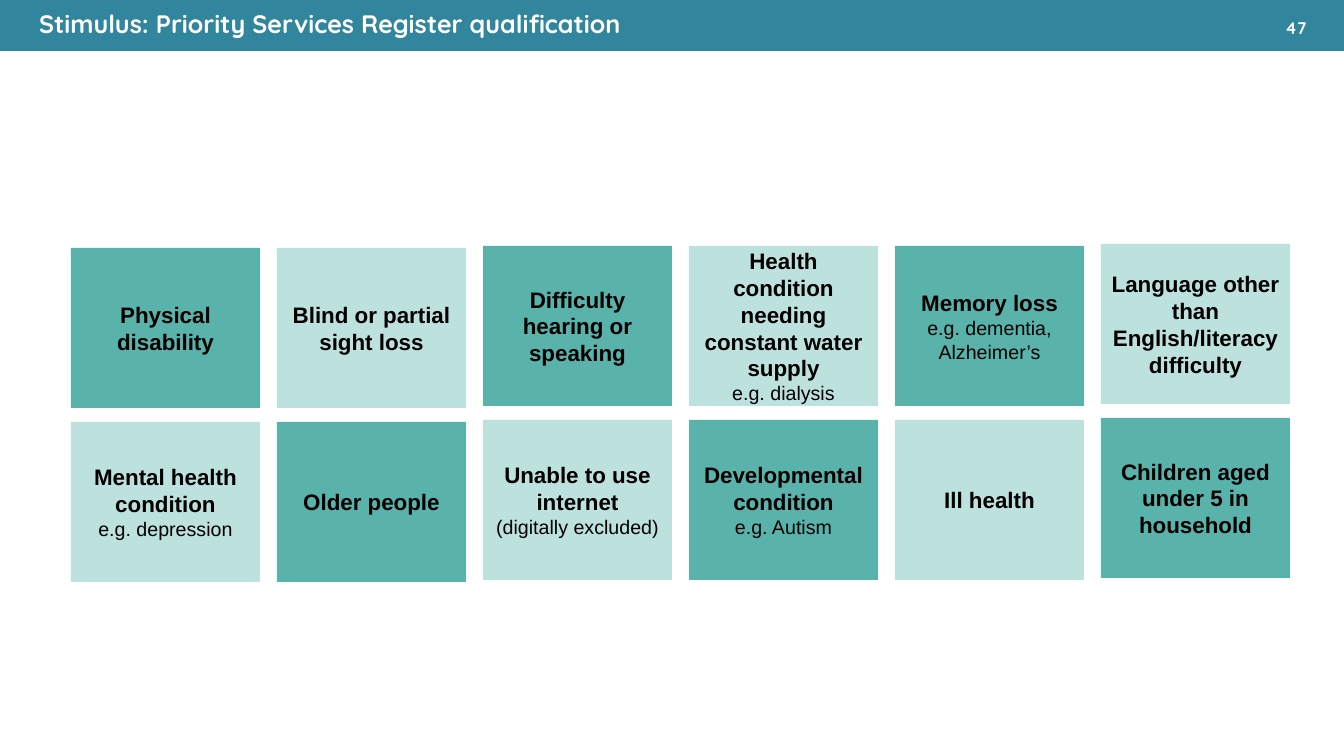
from pptx import Presentation
from pptx.dml.color import RGBColor
from pptx.enum.shapes import MSO_SHAPE as SHAPE
from pptx.enum.text import MSO_ANCHOR as ANCHOR, MSO_AUTO_SIZE as AUTO_SIZE, PP_ALIGN as ALIGN
from pptx.util import Pt

SCALE = 12192000 / 1344
COLORS = {"header": "31859C", "dark": "59B3AA", "light": "BDE1DD", "white": "FFFFFF", "black": "000000"}
CARDS = [
    [
        ["Physical disability"],
        ["Blind or partial sight loss"],
        ["Difficulty hearing or speaking"],
        ["Health condition needing constant water supply", "e.g. dialysis"],
        ["Memory loss", "e.g. dementia, Alzheimer’s"],
        ["Language other than English/literacy difficulty"],
    ],
    [
        ["Mental health condition", "e.g. depression"],
        ["Older people"],
        ["Unable to use internet", "(digitally excluded)"],
        ["Developmental condition", "e.g. Autism"],
        ["Ill health"],
        ["Children aged under 5 in household"],
    ],
]
COLUMN_TOPS = [248, 248, 246, 246, 246, 244]


def px(n):
    return round(n * SCALE)


def style(p, font, size, color, bold, align):
    p.alignment = align
    for r in p.runs:
        r.font.name = font
        r.font.size = Pt(size)
        r.font.bold = bold
        r.font.color.rgb = RGBColor.from_string(COLORS[color])


prs = Presentation()
prs.slide_width = px(1344)
prs.slide_height = px(756)
s = prs.slides.add_slide(prs.slide_layouts[5])

title = s.shapes.title
title.left, title.top, title.width, title.height = 0, 0, px(1344), px(51)
title.fill.solid()
title.fill.fore_color.rgb = RGBColor.from_string(COLORS["header"])
tf = title.text_frame
tf.text = "Stimulus: Priority Services Register qualification"
tf.auto_size = AUTO_SIZE.NONE
tf.word_wrap = True
tf.vertical_anchor = ANCHOR.MIDDLE
tf.margin_left = px(39)
p = tf.paragraphs[0]
p.line_spacing = 0.9
p.space_before = Pt(0)
style(p, "Quicksand", 18, "white", True, ALIGN.LEFT)

number = s.shapes.add_textbox(px(1256), px(2), px(80), px(51))
tf = number.text_frame
tf.text = "47"
tf.word_wrap = True
tf.vertical_anchor = ANCHOR.MIDDLE
style(tf.paragraphs[0], "Quicksand", 12, "white", True, ALIGN.CENTER)

for row, cards in enumerate(CARDS):
    for col, lines in enumerate(cards):
        sp = s.shapes.add_shape(
            SHAPE.RECTANGLE, px(71 + 206 * col), px(COLUMN_TOPS[col] + 174 * row), px(189), px(160)
        )
        sp.shadow.inherit = False
        sp.fill.solid()
        sp.fill.fore_color.rgb = RGBColor.from_string(COLORS["light" if (row + col) % 2 else "dark"])
        sp.line.fill.background()
        tf = sp.text_frame
        tf.text = "\n".join(lines)
        tf.word_wrap = True
        tf.vertical_anchor = ANCHOR.MIDDLE
        for i, p in enumerate(tf.paragraphs):
            style(p, "Arial", 14 if i else 16, "black", i == 0, ALIGN.CENTER)

prs.save("out.pptx")
